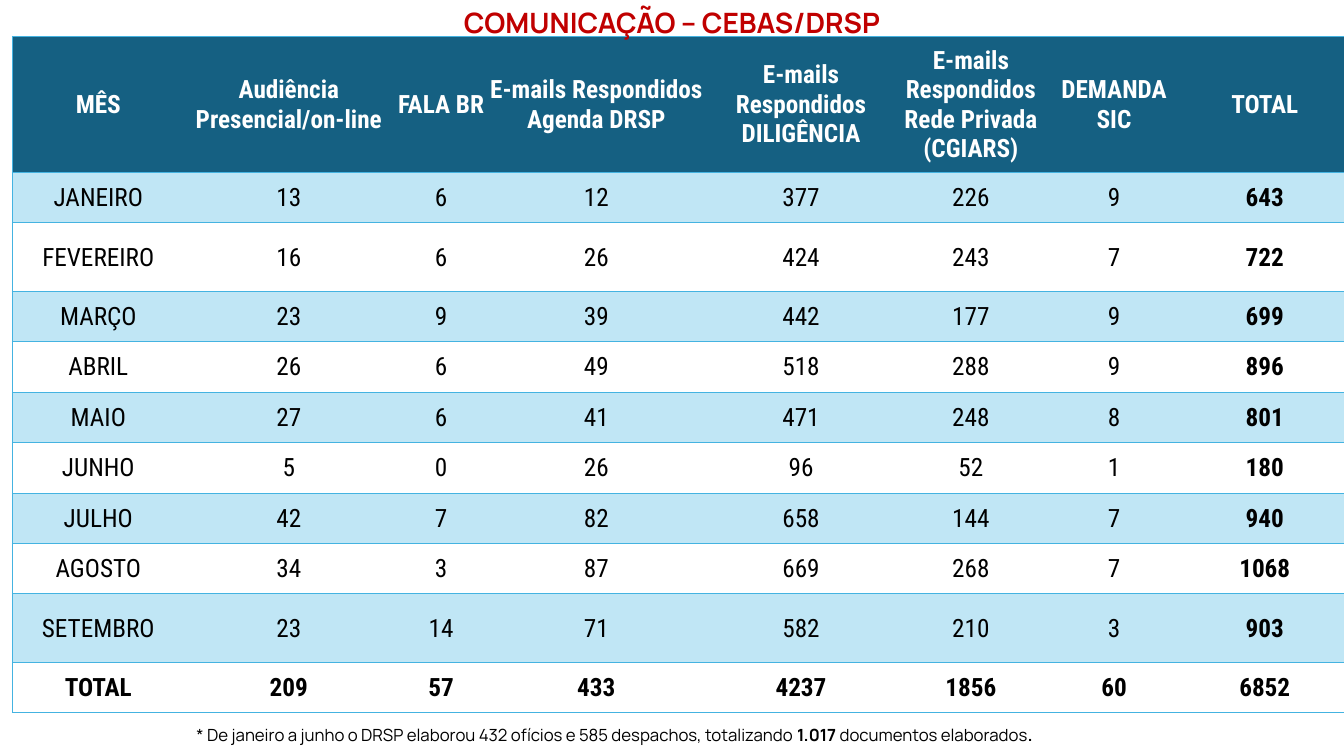
from lxml.etree import SubElement
from pptx import Presentation
from pptx.dml.color import RGBColor
from pptx.enum.text import MSO_ANCHOR, MSO_AUTO_SIZE, PP_ALIGN
from pptx.oxml.ns import qn
from pptx.util import Inches, Pt

HEADINGS = [
    "MÊS", "Audiência\nPresencial/on-line", "FALA BR", "E-mails Respondidos Agenda DRSP",
    "E-mails Respondidos DILIGÊNCIA", "E-mails Respondidos Rede Privada (CGIARS)",
    "DEMANDA SIC", "TOTAL",
]
MONTHS = {
    "JANEIRO": [13, 6, 12, 377, 226, 9],
    "FEVEREIRO": [16, 6, 26, 424, 243, 7],
    "MARÇO": [23, 9, 39, 442, 177, 9],
    "ABRIL": [26, 6, 49, 518, 288, 9],
    "MAIO": [27, 6, 41, 471, 248, 8],
    "JUNHO": [5, 0, 26, 96, 52, 1],
    "JULHO": [42, 7, 82, 658, 144, 7],
    "AGOSTO": [34, 3, 87, 669, 268, 7],
    "SETEMBRO": [23, 14, 71, 582, 210, 3],
}
COLUMN_WIDTHS = [1.71, 2.07, 0.95, 2.13, 1.93, 1.44, 1.4, 1.59]
HEADER_HEIGHT, ROW_HEIGHT, TALL_HEIGHT = 1.35, 0.5, 0.68
TALL_MONTHS = ("FEVEREIRO", "SETEMBRO")
PLAIN_TABLE_STYLE = "{2D5ABB26-0587-4C30-8999-92F81FD0307C}"


def rgb(value):
    return RGBColor.from_string(value)


def write(paragraph, text, font="Manrope", size=12, color="000000", bold=False, align=None):
    if align is not None:
        paragraph.alignment = align
    for index, line in enumerate(text.split("\n")):
        if index:
            paragraph.add_line_break()
        run = paragraph.add_run()
        run.text = line
        run.font.name = font
        run.font.size = Pt(size)
        run.font.bold = bold
        run.font.color.rgb = rgb(color)


class CommunicationSlide:
    """Holds the palette and the slide, and adds each kind of element to it."""

    header_fill = "156082"
    band_fill = "C0E6F5"
    rule_color = "44B3E1"
    title_color = "C00000"

    def __init__(self, deck):
        self.slide = deck.slides.add_slide(deck.slide_layouts[5])

    def title(self, text, left, top, width, height):
        heading = self.slide.shapes.title
        heading.left, heading.top = Inches(left), Inches(top)
        heading.width, heading.height = Inches(width), Inches(height)
        frame = heading.text_frame
        frame.word_wrap = True
        frame.auto_size = MSO_AUTO_SIZE.NONE
        frame.vertical_anchor = MSO_ANCHOR.TOP
        paragraph = frame.paragraphs[0]
        paragraph.line_spacing = 0.9
        write(paragraph, text, size=20, color=self.title_color, bold=True, align=PP_ALIGN.CENTER)
        self.slide.shapes._spTree.append(heading._element)

    def footnote(self, parts, left, top, width, height):
        note = self.slide.shapes.add_textbox(Inches(left), Inches(top), Inches(width), Inches(height))
        frame = note.text_frame
        frame.word_wrap = True
        frame.auto_size = MSO_AUTO_SIZE.SHAPE_TO_FIT_TEXT
        for text, bold in parts:
            write(frame.paragraphs[0], text, bold=bold)

    def border(self, cell, sides):
        properties = cell._tc.get_or_add_tcPr()
        for side in sides:
            line = SubElement(properties, qn(f"a:ln{side}"), w=str(Pt(0.5)))
            fill = SubElement(line, qn("a:solidFill"))
            SubElement(fill, qn("a:srgbClr"), val=self.rule_color)

    def cell(self, cell, text, sides, fill, color, bold):
        cell.margin_left = cell.margin_right = cell.margin_top = Inches(0.01)
        cell.margin_bottom = 0
        cell.vertical_anchor = MSO_ANCHOR.MIDDLE
        self.border(cell, sides)
        if fill:
            cell.fill.solid()
            cell.fill.fore_color.rgb = rgb(fill)
        else:
            cell.fill.background()
        write(cell.text_frame.paragraphs[0], text, font="Roboto Condensed", size=18,
              color=color, bold=bold, align=PP_ALIGN.CENTER)

    def table(self, rows, widths, heights, left, top):
        frame = self.slide.shapes.add_table(
            len(rows), len(widths), Inches(left), Inches(top),
            Inches(sum(widths)), Inches(sum(heights)))
        grid = frame.table
        grid._tbl.tblPr.find(qn("a:tableStyleId")).text = PLAIN_TABLE_STYLE
        grid.horz_banding = False
        for column, width in zip(grid.columns, widths):
            column.width = Inches(width)
        last_row, last_column = len(rows) - 1, len(widths) - 1
        for r, (values, height) in enumerate(zip(rows, heights)):
            grid.rows[r].height = Inches(height)
            fill = self.header_fill if r == 0 else self.band_fill if r % 2 else None
            for c, value in enumerate(values):
                left_side = "L" if c == 0 else ""
                right_side = "R" if c == last_column and r < last_row else ""
                self.cell(grid.cell(r, c), str(value), left_side + right_side + "TB", fill,
                          color="FFFFFF" if r == 0 else "000000",
                          bold=r in (0, last_row) or c == last_column)


def main():
    deck = Presentation()
    deck.slide_width, deck.slide_height = Inches(13.33), Inches(7.5)
    page = CommunicationSlide(deck)

    monthly = [[month, *counts, sum(counts)] for month, counts in MONTHS.items()]
    totals = ["TOTAL", *(sum(column) for column in list(zip(*monthly))[1:])]
    month_heights = [TALL_HEIGHT if month in TALL_MONTHS else ROW_HEIGHT for month in MONTHS]
    page.table([HEADINGS, *monthly, totals], COLUMN_WIDTHS,
               [HEADER_HEIGHT, *month_heights, ROW_HEIGHT], 0.12, 0.36)
    page.title("COMUNICAÇÃO – CEBAS/DRSP", 0, 0.04, 13.33, 0.75)
    page.footnote([
        ("* De janeiro a junho o DRSP elaborou 432 ofícios e 585 despachos, totalizando ", False),
        ("1.017 ", True),
        ("documentos elaborados", False),
        (".", True),
    ], 1.85, 7.14, 9.27, 0.5)
    deck.save("out.pptx")


if __name__ == "__main__":
    main()
